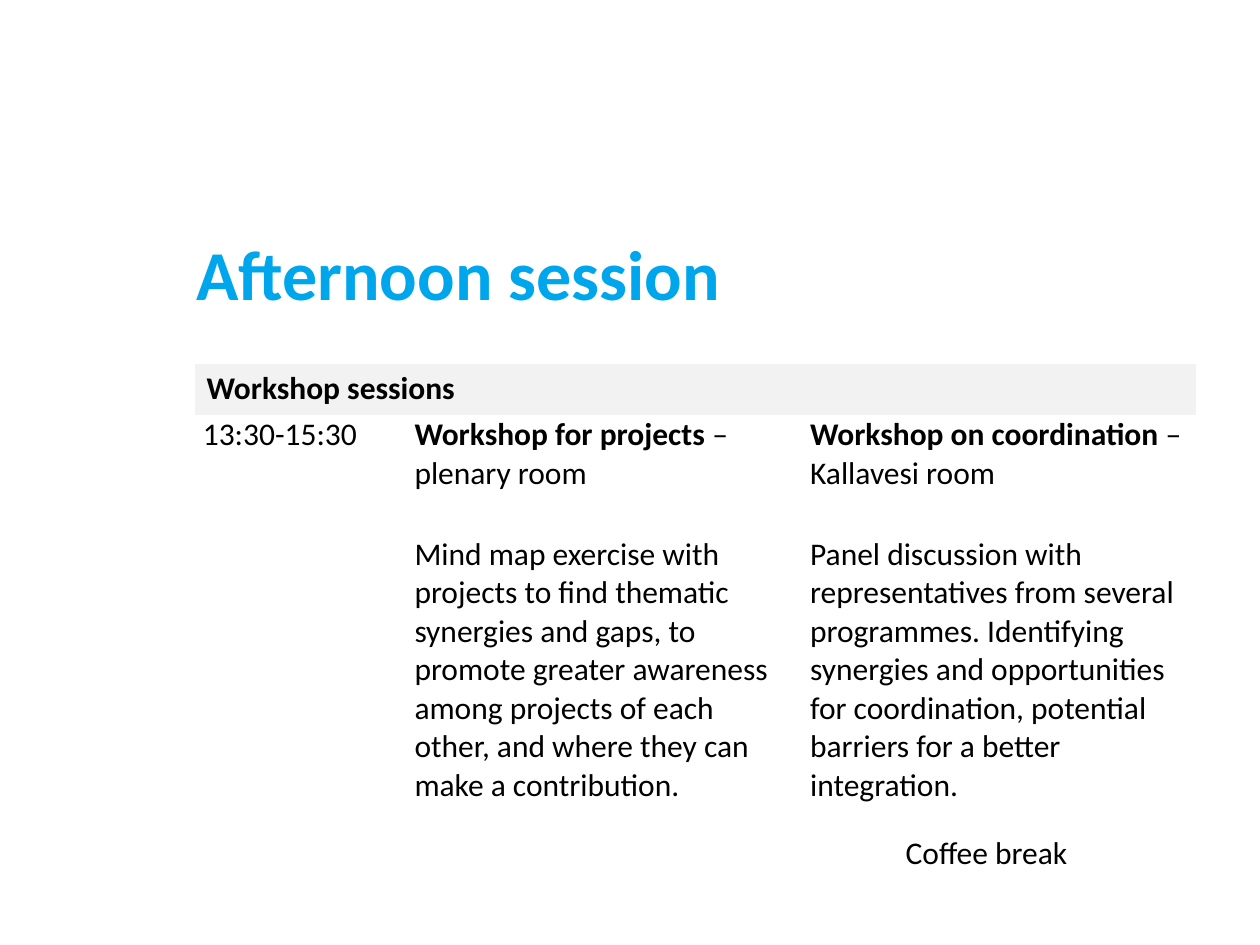
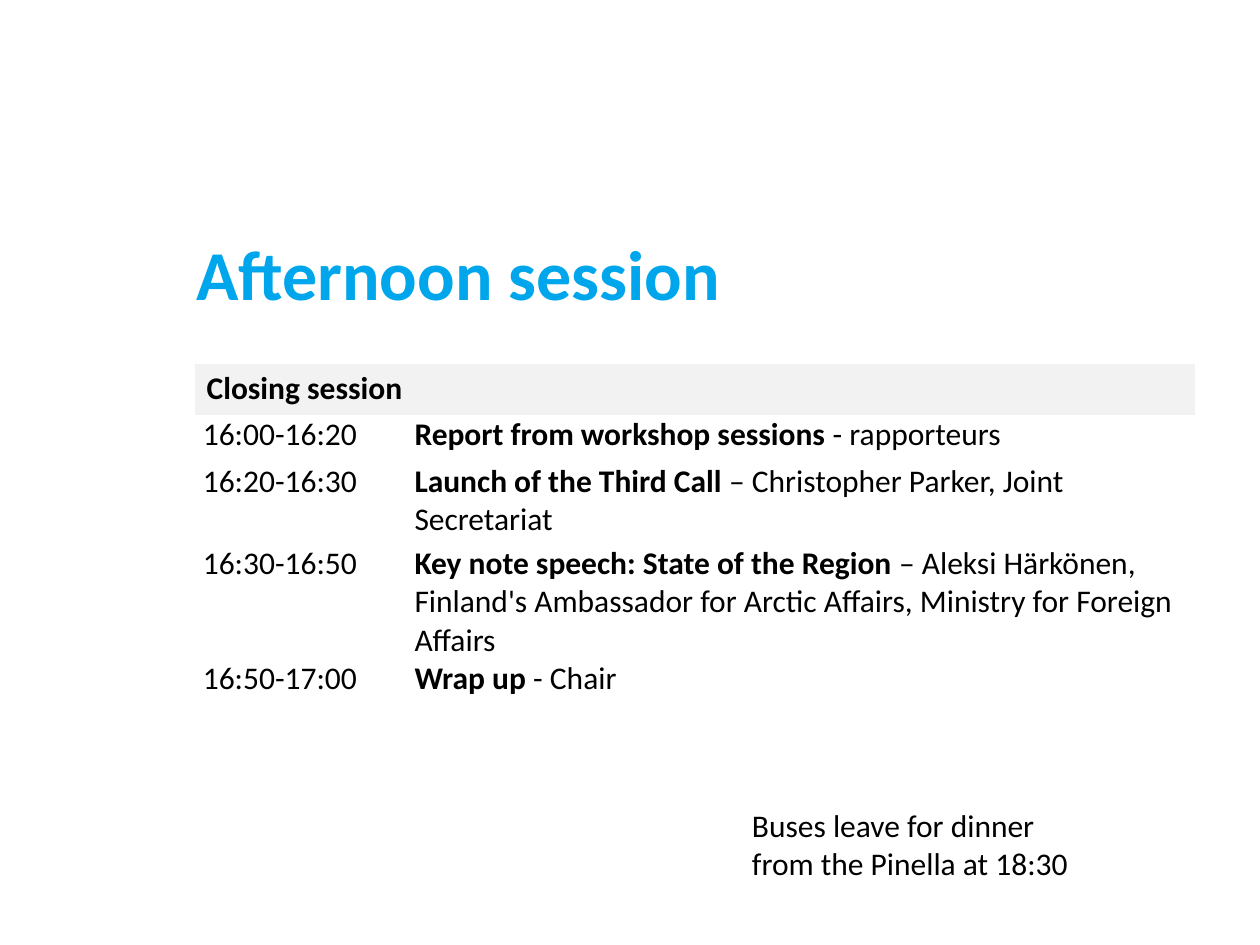
"""Build the two agenda pages of the afternoon session."""
from dataclasses import dataclass

from pptx import Presentation
from pptx.dml.color import RGBColor
from pptx.enum.text import MSO_ANCHOR, MSO_AUTO_SIZE, PP_ALIGN
from pptx.util import Emu, Pt

EMU_PER_PX = 9144
FONT = "Calibri"
SKY_BLUE = RGBColor(0x00, 0xA6, 0xEB)
BLACK = RGBColor(0x00, 0x00, 0x00)
BAND_GREY = RGBColor(0xF2, 0xF2, 0xF2)
LEFT = PP_ALIGN.LEFT
MIDDLE = MSO_ANCHOR.MIDDLE
FIT_SHAPE = MSO_AUTO_SIZE.SHAPE_TO_FIT_TEXT

TITLE_ONLY = 5
BODY_SIZE = 18
TITLE_BOX = (146, 175, 709, 82)
TABLE_LEFT, TABLE_TOP = 154, 288
CELL_SIDE = 7
LINE_HEIGHT = 30


@dataclass(frozen=True)
class Entry:
    """Cell text: a bold lead, then plain words, below an optional gap."""
    lead: str = ""
    rest: str = ""
    gap: int = 0


@dataclass(frozen=True)
class Note:
    """A remark below the agenda."""
    text: str
    box: tuple[int, int, int, int]
    wrap: bool


@dataclass(frozen=True)
class Agenda:
    """One page with its heading band, rows and remark."""
    heading: str
    columns: tuple[int, ...]
    heights: tuple[int, ...]
    rows: tuple[tuple[Entry, ...], ...]
    note: Note


AGENDAS = (
    Agenda(
        "Workshop sessions", (168, 314, 314), (42, 65, 239),
        (
            (Entry(rest="13:30-15:30"),
             Entry("Workshop for projects ", "– plenary room"),
             Entry("Workshop on coordination ", "– Kallavesi room")),
            (Entry(),
             Entry(rest="Mind map exercise with projects to find thematic synergies and gaps, "
                        "to promote greater awareness among projects of each other, and where "
                        "they can make a contribution.", gap=LINE_HEIGHT),
             Entry(rest="Panel discussion with representatives from several programmes. "
                        "Identifying synergies and opportunities for coordination, potential "
                        "barriers for a better integration.", gap=LINE_HEIGHT)),
        ),
        Note("Coffee break", (709, 656, 150, 40), False),
    ),
    Agenda(
        "Closing session", (168, 627), (42, 37, 65, 91, 28),
        (
            (Entry(rest="16:00-16:20"),
             Entry("Report from workshop sessions ", "- rapporteurs")),
            (Entry(rest="16:20-16:30"),
             Entry("Launch of the Third Call ", "– Christopher Parker, Joint Secretariat")),
            (Entry(rest="16:30-16:50"),
             Entry("Key note speech: State of the Region ",
                   "– Aleksi Härkönen, Finland's Ambassador for Arctic Affairs, "
                   "Ministry for Foreign Affairs")),
            (Entry(rest="16:50-17:00"), Entry("Wrap up ", "- Chair")),
        ),
        Note("Buses leave for dinner from the Pinella at 18:30", (587, 635, 283, 71), True),
    ),
)


def px(length: int) -> Emu:
    """Turn px into EMU."""
    return Emu(length * EMU_PER_PX)


def style(paragraph, size: int = BODY_SIZE, color: RGBColor = BLACK) -> None:
    """Give a paragraph the deck's font."""
    paragraph.alignment = LEFT
    paragraph.font.name = FONT
    paragraph.font.size = Pt(size)
    paragraph.font.color.rgb = color


def add_title(page, text: str) -> None:
    """Place and format the title."""
    title = page.shapes.title
    title.left, title.top, title.width, title.height = map(px, TITLE_BOX)
    title.text_frame.text = text
    title.text_frame.vertical_anchor = MIDDLE
    paragraph = title.text_frame.paragraphs[0]
    style(paragraph, 40, SKY_BLUE)
    paragraph.font.bold = True


def fill_cell(cell, entry: Entry) -> None:
    """Write one entry into a plain cell."""
    cell.fill.background()
    cell.margin_left = cell.margin_right = px(CELL_SIDE)
    cell.margin_top, cell.margin_bottom = px(entry.gap), px(0)
    paragraph = cell.text_frame.paragraphs[0]
    style(paragraph)
    for text, bold in ((entry.lead, True), (entry.rest, False)):
        if text:
            span = paragraph.add_run()
            span.text = text
            span.font.bold = bold


def add_agenda(page, agenda: Agenda) -> None:
    """Draw the agenda table."""
    frame = page.shapes.add_table(
        len(agenda.heights), len(agenda.columns), px(TABLE_LEFT), px(TABLE_TOP),
        px(sum(agenda.columns)), px(sum(agenda.heights)))
    table = frame.table
    table.first_row = table.horz_banding = False
    for column, width in zip(table.columns, agenda.columns):
        column.width = px(width)
    for row, height in zip(table.rows, agenda.heights):
        row.height = px(height)

    band = table.cell(0, 0)
    band.merge(table.cell(0, len(agenda.columns) - 1))
    band.fill.solid()
    band.fill.fore_color.rgb = BAND_GREY
    band.text = agenda.heading
    heading = band.text_frame.paragraphs[0]
    style(heading)
    heading.font.bold = True

    for row_index, entries in enumerate(agenda.rows, start=1):
        for column_index, entry in enumerate(entries):
            fill_cell(table.cell(row_index, column_index), entry)


def add_note(page, note: Note) -> None:
    """Write the remark below the table."""
    box = page.shapes.add_textbox(*map(px, note.box))
    box.text_frame.word_wrap = note.wrap
    box.text_frame.auto_size = FIT_SHAPE
    box.text_frame.text = note.text
    style(box.text_frame.paragraphs[0])


def main() -> None:
    """Build and save the deck."""
    deck = Presentation()
    deck.slide_width, deck.slide_height = px(1000), px(750)
    for agenda in AGENDAS:
        page = deck.slides.add_slide(deck.slide_layouts[TITLE_ONLY])
        add_title(page, "Afternoon session")
        add_agenda(page, agenda)
        add_note(page, agenda.note)
    deck.save("out.pptx")


if __name__ == "__main__":
    main()
